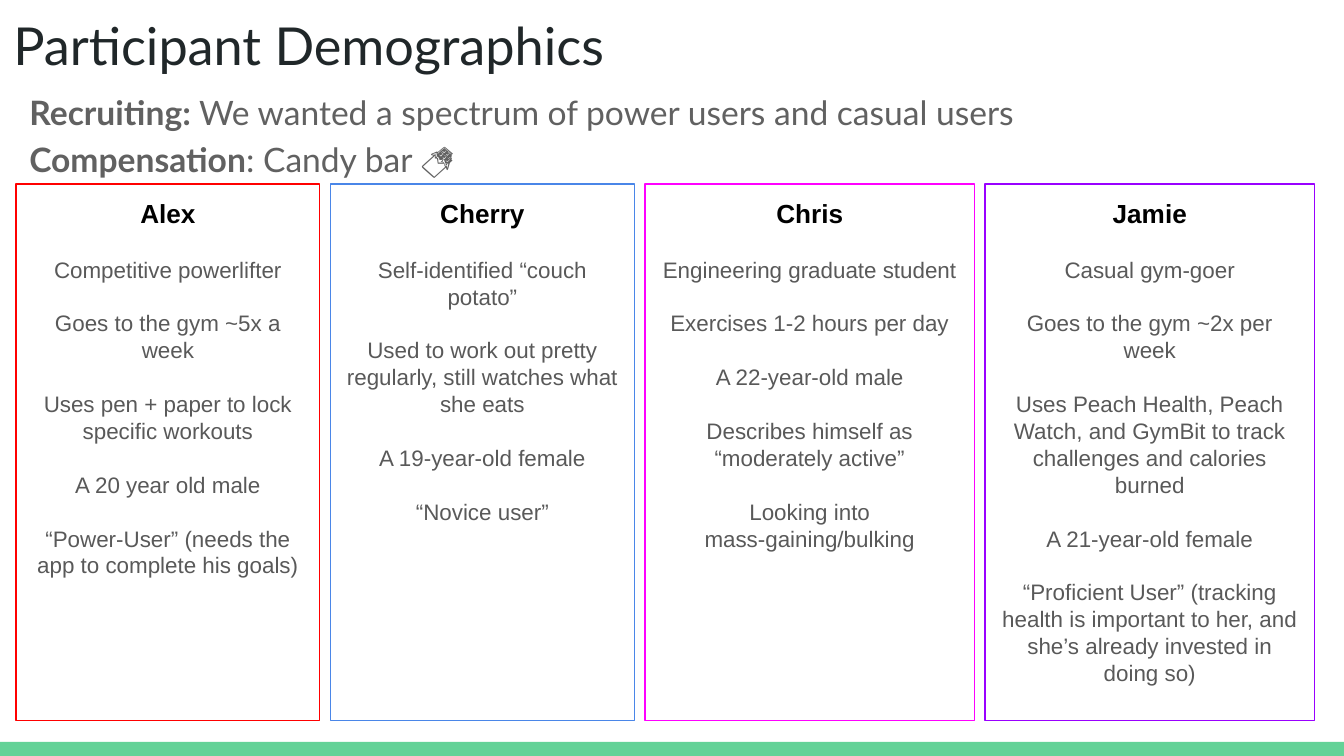
from dataclasses import dataclass

from pptx import Presentation
from pptx.dml.color import RGBColor
from pptx.enum.shapes import MSO_SHAPE
from pptx.enum.text import MSO_ANCHOR, MSO_AUTO_SIZE, PP_ALIGN
from pptx.slide import Slide
from pptx.text.text import TextFrame, _Paragraph
from pptx.util import Inches, Pt

RECTANGLE = MSO_SHAPE.RECTANGLE
TOP = MSO_ANCHOR.TOP
NO_AUTOFIT = MSO_AUTO_SIZE.NONE
LEFT, CENTER = PP_ALIGN.LEFT, PP_ALIGN.CENTER

SLIDE_WIDTH = 10
SLIDE_HEIGHT = SLIDE_WIDTH * 9 / 16
BAR_TOP = 5.52
CARD_LEFT, CARD_TOP, CARD_HEIGHT, CARD_GAP = 0.12, 1.37, 3.99, 0.08


@dataclass(frozen=True)
class Theme:
    heading_font: str = "Lato"
    card_font: str = "Arial"
    title_size: float = 28
    summary_size: float = 18
    name_size: float = 14
    fact_size: float = 12
    fact_gap: float = 14.4
    title_color: str = "202729"
    summary_color: str = "616161"
    name_color: str = "000000"
    fact_color: str = "595959"
    bar_color: str = "63D297"


@dataclass(frozen=True)
class Participant:
    name: str
    color: str
    width: float
    facts: tuple[str, ...]


THEME = Theme()

SUMMARY = (
    ("Recruiting:", " We wanted a spectrum of power users and casual users"),
    ("Compensation", ": Candy bar 🍫"),
)

PARTICIPANTS = (
    Participant("Alex", "FF0000", 2.26, (
        "Competitive powerlifter",
        "Goes to the gym ~5x a week",
        "Uses pen + paper to lock specific workouts",
        "A 20 year old male",
        "“Power-User” (needs the app to complete his goals)",
    )),
    Participant("Cherry", "4A86E8", 2.26, (
        "Self-identified “couch potato”",
        "Used to work out pretty regularly, still watches what she eats",
        "A 19-year-old female",
        "“Novice user”",
    )),
    Participant("Chris", "FF00FF", 2.45, (
        "Engineering graduate student",
        "Exercises 1-2 hours per day",
        "A 22-year-old male",
        "Describes himself as “moderately active”",
        "Looking into mass-gaining/bulking",
    )),
    Participant("Jamie", "9900FF", 2.45, (
        "Casual gym-goer",
        "Goes to the gym ~2x per week",
        "Uses Peach Health, Peach Watch, and GymBit to track challenges and calories burned",
        "A 21-year-old female",
        "“Proficient User” (tracking health is important to her, "
        "and she’s already invested in doing so)",
    )),
)


def prepare_frame(frame: TextFrame) -> None:
    frame.word_wrap = True
    frame.auto_size = NO_AUTOFIT
    frame.vertical_anchor = TOP
    frame.margin_left = frame.margin_right = Inches(0.1)
    frame.margin_top = frame.margin_bottom = Inches(0.1)


def add_run(paragraph: _Paragraph, text: str, font_name: str, size: float,
            color: str, bold: bool = False) -> None:
    run = paragraph.add_run()
    run.text = text
    run.font.name = font_name
    run.font.size = Pt(size)
    run.font.bold = bold
    run.font.color.rgb = RGBColor.from_string(color)


def draw_bar(slide: Slide) -> None:
    bar = slide.shapes.add_shape(
        RECTANGLE, Inches(0), Inches(BAR_TOP), Inches(SLIDE_WIDTH), Inches(SLIDE_HEIGHT - BAR_TOP))
    bar.shadow.inherit = False
    bar.fill.solid()
    bar.fill.fore_color.rgb = RGBColor.from_string(THEME.bar_color)
    bar.line.fill.background()


def draw_title(slide: Slide, text: str) -> None:
    title = slide.shapes.title
    title.left, title.top = Inches(0), Inches(0)
    title.width, title.height = Inches(9.32), Inches(0.63)
    prepare_frame(title.text_frame)
    paragraph = title.text_frame.paragraphs[0]
    paragraph.alignment = LEFT
    add_run(paragraph, text, THEME.heading_font, THEME.title_size, THEME.title_color)


def draw_summary(slide: Slide) -> None:
    box = slide.shapes.add_textbox(Inches(CARD_LEFT), Inches(0.54), Inches(8.71), Inches(0.75))
    frame = box.text_frame
    prepare_frame(frame)
    for index, (label, detail) in enumerate(SUMMARY):
        paragraph = frame.add_paragraph() if index else frame.paragraphs[0]
        paragraph.line_spacing = 1.15
        for text, bold in ((label, True), (detail, False)):
            add_run(paragraph, text, THEME.heading_font, THEME.summary_size,
                    THEME.summary_color, bold)


def draw_card(slide: Slide, participant: Participant, left: float) -> None:
    card = slide.shapes.add_shape(
        RECTANGLE, Inches(left), Inches(CARD_TOP), Inches(participant.width), Inches(CARD_HEIGHT))
    card.shadow.inherit = False
    card.fill.background()
    card.line.color.rgb = RGBColor.from_string(participant.color)
    card.line.width = Pt(0.75)
    frame = card.text_frame
    prepare_frame(frame)
    heading = frame.paragraphs[0]
    heading.alignment = CENTER
    add_run(heading, participant.name, THEME.card_font, THEME.name_size, THEME.name_color, True)
    for fact in participant.facts:
        paragraph = frame.add_paragraph()
        paragraph.alignment = CENTER
        paragraph.space_before = Pt(THEME.fact_gap)
        add_run(paragraph, fact, THEME.card_font, THEME.fact_size, THEME.fact_color)


def main() -> None:
    presentation = Presentation()
    presentation.slide_width = Inches(SLIDE_WIDTH)
    presentation.slide_height = Inches(SLIDE_HEIGHT)
    slide = presentation.slides.add_slide(presentation.slide_layouts[5])
    draw_bar(slide)
    draw_title(slide, "Participant Demographics")
    left = CARD_LEFT
    for participant in PARTICIPANTS:
        draw_card(slide, participant, left)
        left += participant.width + CARD_GAP
    draw_summary(slide)
    presentation.save("out.pptx")


if __name__ == "__main__":
    main()
